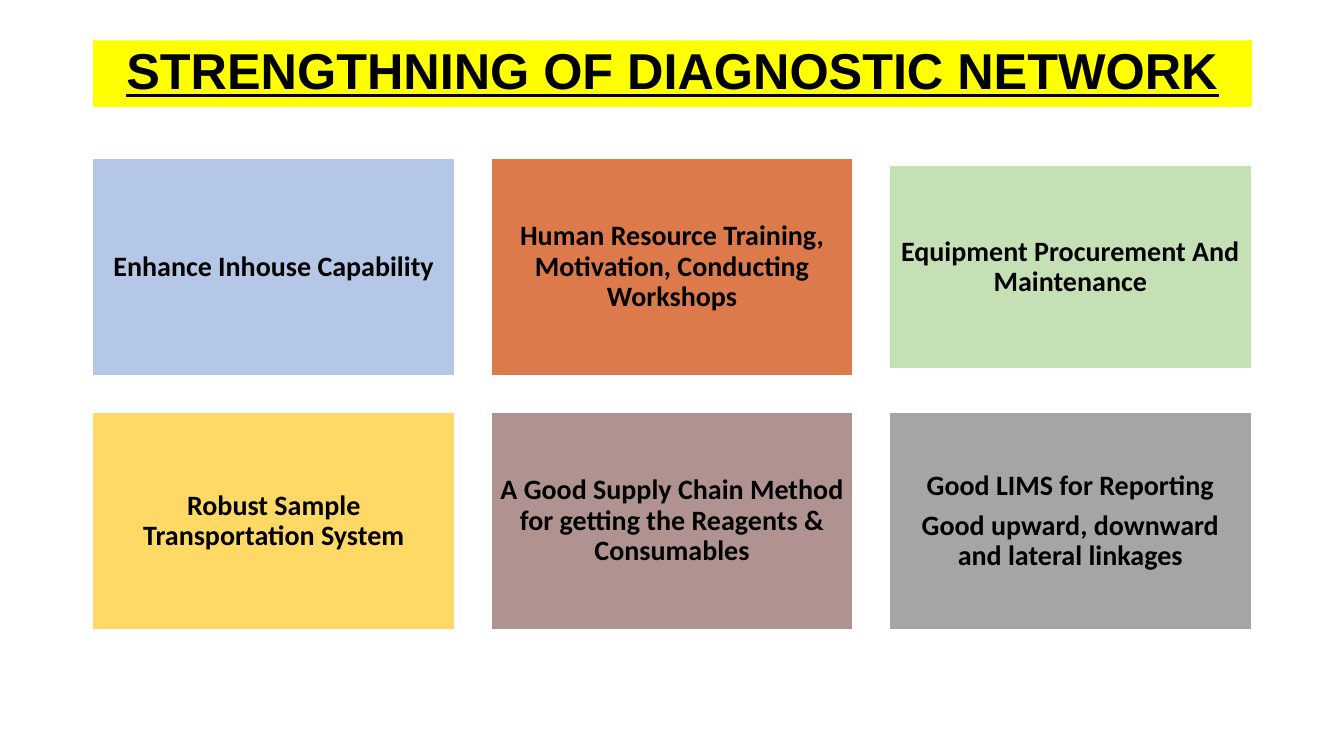
from pptx import Presentation
from pptx.dml.color import RGBColor
from pptx.enum.shapes import MSO_SHAPE
from pptx.enum.text import MSO_ANCHOR, PP_ALIGN
from pptx.util import Pt

PX = 9144
COLORS = {
    "black": "000000",
    "white": "FFFFFF",
    "yellow": "FFFF00",
    "blue": "B4C7E7",
    "orange": "DC7A4B",
    "green": "C5E0B4",
    "gold": "FFD966",
    "mauve": "B09391",
    "gray": "A5A5A5",
}
COLUMNS = 3
LEFT, TOP = 92, 157
CARD_WIDTH, CARD_HEIGHT = 359, 216
COLUMN_STEP, ROW_STEP = 395, 252
CARD_INSET = 8
MEASURES = [
    ("blue", CARD_HEIGHT, ["Enhance Inhouse Capability"]),
    ("orange", CARD_HEIGHT, ["Human Resource Training, Motivation, Conducting Workshops"]),
    ("green", 202, ["Equipment Procurement And Maintenance"]),
    ("gold", CARD_HEIGHT, ["Robust Sample Transportation System"]),
    ("mauve", CARD_HEIGHT, ["A Good Supply Chain Method for getting the Reagents & Consumables"]),
    ("gray", CARD_HEIGHT, ["Good LIMS for Reporting", "Good upward, downward and lateral linkages"]),
]
HEADING_FONT = {"name": "Arial", "size": Pt(36), "bold": True, "underline": True}
CARD_FONT = {"name": "Calibri", "size": Pt(20), "bold": True}
HEADING_PARAGRAPH = {"alignment": PP_ALIGN.CENTER, "line_spacing": 0.9}
CARD_PARAGRAPH = {**HEADING_PARAGRAPH, "space_after": Pt(7)}


def rgb(color):
    return RGBColor.from_string(COLORS[color])


def apply(target, values):
    for attribute, value in values.items():
        setattr(target, attribute, value)


def paint(shape, color):
    shape.fill.solid()
    shape.fill.fore_color.rgb = rgb(color)


def write(shape, lines, paragraph_format, font_format):
    frame = shape.text_frame
    apply(frame, {"word_wrap": True, "vertical_anchor": MSO_ANCHOR.MIDDLE})
    frame.text = "\n".join(lines)
    for paragraph in frame.paragraphs:
        apply(paragraph, paragraph_format)
        for run in paragraph.runs:
            apply(run.font, font_format)
            run.font.color.rgb = rgb("black")


def add_heading(slide, text):
    heading = slide.shapes.title
    apply(heading, {"left": LEFT * PX, "top": 40 * PX, "width": 1150 * PX, "height": 66 * PX})
    paint(heading, "yellow")
    write(heading, [text], HEADING_PARAGRAPH, HEADING_FONT)


def add_card(slide, left, top, height, color, lines):
    card = slide.shapes.add_shape(
        MSO_SHAPE.RECTANGLE, left * PX, top * PX, CARD_WIDTH * PX, height * PX
    )
    card.shadow.inherit = False
    paint(card, color)
    card.line.color.rgb = rgb("white")
    card.line.width = Pt(1)
    for side in ("left", "top", "right", "bottom"):
        setattr(card.text_frame, f"margin_{side}", CARD_INSET * PX)
    write(card, lines, CARD_PARAGRAPH, CARD_FONT)


def main():
    presentation = Presentation()
    apply(presentation, {"slide_width": 1333 * PX, "slide_height": 750 * PX})
    slide = presentation.slides.add_slide(presentation.slide_layouts[5])
    add_heading(slide, "STRENGTHNING OF DIAGNOSTIC NETWORK")
    for index, (color, height, lines) in enumerate(MEASURES):
        row, column = divmod(index, COLUMNS)
        left = LEFT + column * COLUMN_STEP
        top = TOP + row * ROW_STEP + (CARD_HEIGHT - height) // 2
        add_card(slide, left, top, height, color, lines)
    presentation.save("out.pptx")


if __name__ == "__main__":
    main()
